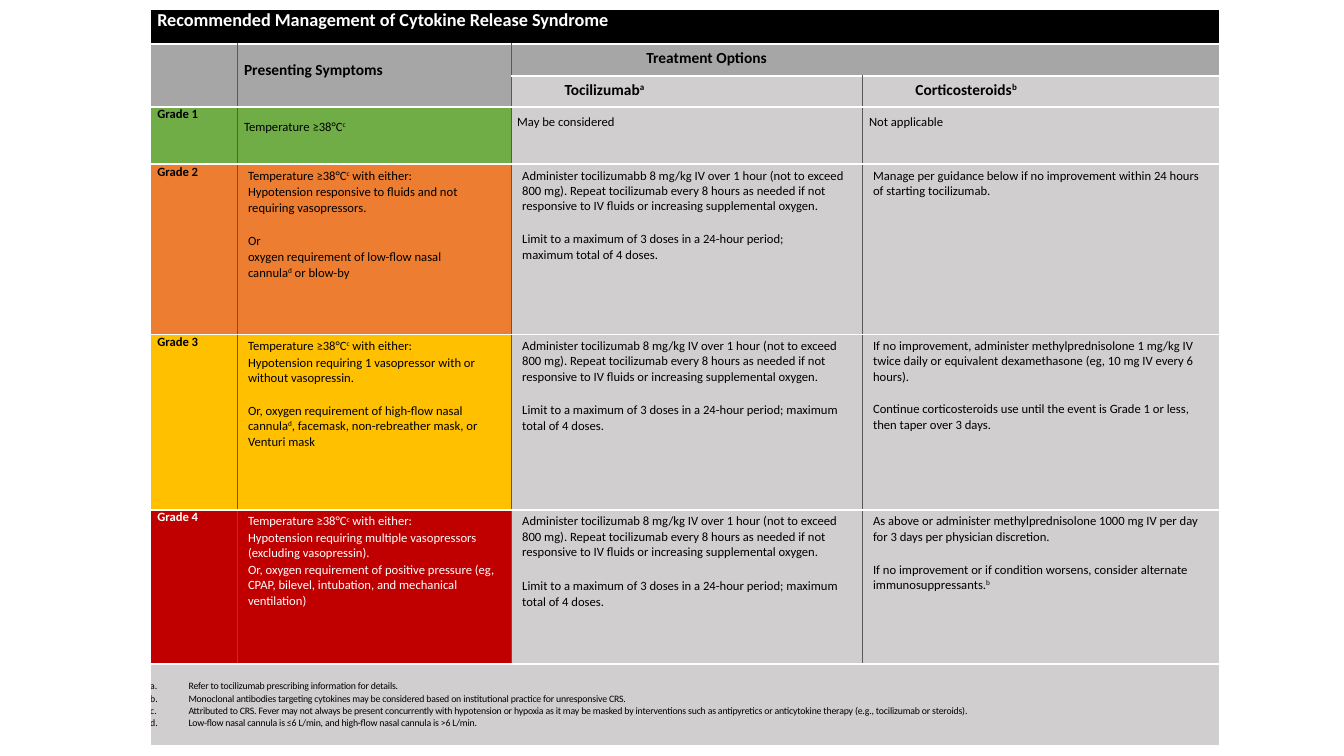
from dataclasses import dataclass
from lxml import etree
from pptx import Presentation
from pptx.dml.color import RGBColor
from pptx.enum.text import MSO_ANCHOR, PP_ALIGN
from pptx.oxml.ns import qn
from pptx.util import Inches, Pt

TOP, MID = MSO_ANCHOR.TOP, MSO_ANCHOR.MIDDLE
JUST = PP_ALIGN.JUSTIFY


@dataclass(frozen=True)
class Theme:
    font: str = "Calibri"
    black: str = "000000"
    white: str = "FFFFFF"
    head: str = "A6A6A6"
    pale: str = "D0CECE"
    rule: str = "595959"
    title: float = 13
    sub: float = 11
    body: float = 9
    note: float = 7


T = Theme()
COLS = [0.86, 2.72, 3.48, 3.55]
ROWS = [0.35, 0.31, 0.31, 0.57, 1.69, 1.74, 1.53, 0.81]
PAD = 0.04
GAP = {"space_before": Pt(12.5)}  # one blank line plus normal spacing
FEVER = "Temperature ≥38°C^c^ with either:"
DOSE = ("Administer {} 8 mg/kg IV over 1 hour (not to exceed 800 mg). Repeat tocilizumab "
        "every 8 hours as needed if not responsive to IV fluids or increasing supplemental oxygen.")
DRUG = DOSE.format("tocilizumab")
LIMIT = ("Limit to a maximum of 3 doses in a 24-hour period; maximum total of 4 doses.",
         {**GAP, "line_spacing": Pt(11.5)})

# Grade: fill, ink, symptoms, tocilizumab, corticosteroids
GRADES = [
    ("ED7D31", T.black,
     [FEVER, "Hypotension responsive to fluids and not requiring vasopressors.",
      ("Or", GAP),
      ("oxygen requirement of low-flow nasal cannula^d^ or blow-by", {"right": 0.26})],
     [DOSE.format("tocilizumabb"),
      ("Limit to a maximum of 3 doses in a 24-hour period;", GAP),
      ("maximum total of 4 doses.", {"line_spacing": Pt(10.4)})],
     ["Manage per guidance below if no improvement within 24 hours of starting tocilizumab."]),
    ("FFC000", T.black,
     [FEVER, "Hypotension requiring 1 vasopressor with or without vasopressin.",
      ("Or, oxygen requirement of high-flow nasal cannula^d^, facemask, "
       "non-rebreather mask, or Venturi mask", GAP)],
     [DRUG, LIMIT],
     ["If no improvement, administer methylprednisolone 1 mg/kg IV twice daily or "
      "equivalent dexamethasone (eg, 10 mg IV every 6 hours).",
      ("Continue corticosteroids use until the event is Grade 1 or less, "
       "then taper over 3 days.", GAP)]),
    ("C00000", T.white,
     [FEVER, "Hypotension requiring multiple vasopressors (excluding vasopressin).",
      "Or, oxygen requirement of positive pressure (eg, CPAP, bilevel, intubation, "
      "and mechanical ventilation)"],
     [DRUG, LIMIT],
     ["As above or administer methylprednisolone 1000 mg IV per day for 3 days "
      "per physician discretion.",
      ("If no improvement or if condition worsens, consider alternate "
       "immunosuppressants.^b^", GAP)]),
]
NOTES = [
    "Refer to tocilizumab prescribing information for details.",
    "Monoclonal antibodies targeting cytokines may be considered based on institutional "
    "practice for unresponsive CRS.",
    "Attributed to CRS. Fever may not always be present concurrently with hypotension or "
    "hypoxia as it may be masked by interventions such as antipyretics or anticytokine "
    "therapy (e.g., tocilizumab or steroids).",
    "Low-flow nasal cannula is ≤6 L/min, and high-flow nasal cannula is >6 L/min.",
]


def apply(obj, vals):
    for name, val in vals.items():
        setattr(obj, name, val)


def edge(cell, tag, color, width):
    line = etree.SubElement(cell._tc.get_or_add_tcPr(), qn("a:" + tag), w=str(Pt(width)))
    fill = etree.SubElement(line, qn("a:solidFill"))
    etree.SubElement(fill, qn("a:srgbClr"), val=color)


def write(para, text, size, ink, bold):
    """Add runs; text between carets is superscript."""
    for i, part in enumerate(text.split("^")):
        if not part:
            continue
        run = para.add_run()
        run.text = part
        apply(run.font, {"name": T.font, "size": Pt(size), "bold": bold})
        run.font.color.rgb = RGBColor.from_string(ink)
        if i % 2:
            run._r.get_or_add_rPr().set("baseline", "30000")


def put(grid, row, col, lines, fill, size=T.body, ink=T.black, bold=False, span=(1, 1),
        left=0.07, pad=0, top=None, low=None, anchor=TOP, form=None):
    """Fill one cell, merged over span (rows, columns)."""
    cell = grid.cell(row, col)
    if span != (1, 1):
        cell.merge(grid.cell(row + span[0] - 1, col + span[1] - 1))
    # Borders come before the fill
    if col > 0:
        edge(cell, "lnL", T.rule, 0.5)
    if col + span[1] < len(COLS):
        edge(cell, "lnR", T.rule, 0.5)
    if row > 0:
        edge(cell, "lnT", T.white, 1.5)
    if row + span[0] < len(ROWS):
        edge(cell, "lnB", T.white, 1.5)
    cell.fill.solid()
    cell.fill.fore_color.rgb = RGBColor.from_string(fill)
    apply(cell, {"margin_left": Inches(pad), "margin_right": Inches(pad),
                 "margin_top": Inches(pad if top is None else top),
                 "margin_bottom": Inches(pad if low is None else low),
                 "vertical_anchor": anchor})
    frame = cell.text_frame
    for i, line in enumerate(lines):
        text, extra = line if isinstance(line, tuple) else (line, {})
        para = frame.add_paragraph() if i else frame.paragraphs[0]
        vals = {"space_before": Pt(1), "right": 0, **(form or {}), **extra}
        props = para._p.get_or_add_pPr()
        props.set("marL", str(Inches(left)))
        props.set("marR", str(Inches(vals.pop("right"))))
        apply(para, vals)
        write(para, text, size, ink, bold)
    return cell


def header(grid):
    put(grid, 0, 0, ["Recommended Management of Cytokine Release Syndrome"], T.black,
        T.title, T.white, True, (1, 4))
    put(grid, 1, 0, [], T.head, span=(2, 1))
    put(grid, 1, 1, ["Presenting Symptoms"], T.head, T.sub, bold=True, span=(2, 1), top=0.16)
    look = {"size": T.sub, "bold": True, "anchor": MID,
            "form": {"space_before": Pt(0), "line_spacing": Pt(11.4)}}
    put(grid, 1, 2, ["Treatment Options"], T.head, span=(1, 2), left=1.34, **look)
    for col, text in enumerate(["Tocilizumab^a^", "Corticosteroids^b^"], 2):
        put(grid, 2, col, [text], T.pale, left=0.53, **look)


def grades(grid):
    # Grade 1 is short and has its own alignment
    green = "70AD47"
    put(grid, 3, 0, ["Grade 1"], green, bold=True)
    put(grid, 3, 1, ["Temperature ≥38°C^c^"], green, anchor=MID, low=0.17)
    for col, text in enumerate(["May be considered", "Not applicable"], 2):
        put(grid, 3, col, [text], T.pale, left=0.06 if col == 2 else 0.07,
            form={"line_spacing": 1.5})
    # Grades 2 to 4
    look = {"pad": PAD, "form": {"right": 0.06}}
    for num, (fill, ink, signs, *cares) in enumerate(GRADES, 2):
        row = num + 2
        put(grid, row, 0, [f"Grade {num}"], fill, ink=ink, bold=True)
        put(grid, row, 1, signs, fill, ink=ink, **look)
        for col, care in enumerate(cares, 2):
            put(grid, row, col, care, T.pale, **look)


def footer(grid):
    cell = put(grid, 7, 0, NOTES, T.pale, T.note, span=(1, 4), left=0.38, top=0.14,
               form={"alignment": JUST, "space_before": Pt(0.1)})
    paras = cell.text_frame.paragraphs
    paras[0].line_spacing = Pt(10.3)
    for para in paras:
        props = para._p.get_or_add_pPr()
        props.set("indent", str(-Inches(0.38)))
        etree.SubElement(props, qn("a:buAutoNum"), type="alphaLcPeriod")
        for run in para.runs:
            run._r.get_or_add_rPr().set("spc", "-10")


def chart(slide, left, top):
    """Place the whole management table with its corner at left, top."""
    grid = slide.shapes.add_table(len(ROWS), len(COLS), Inches(left), Inches(top),
                                  Inches(sum(COLS)), Inches(sum(ROWS))).table
    apply(grid, {"first_row": False, "horz_banding": False})
    for col, width in zip(grid.columns, COLS):
        col.width = Inches(width)
    for row, height in zip(grid.rows, ROWS):
        row.height = Inches(height)
    header(grid)
    grades(grid)
    footer(grid)


def main():
    deck = Presentation()
    apply(deck, {"slide_width": Inches(13.33), "slide_height": Inches(7.5)})
    slide = deck.slides.add_slide(deck.slide_layouts[6])
    chart(slide, 1.49, 0.09)
    deck.save("out.pptx")


if __name__ == "__main__":
    main()
